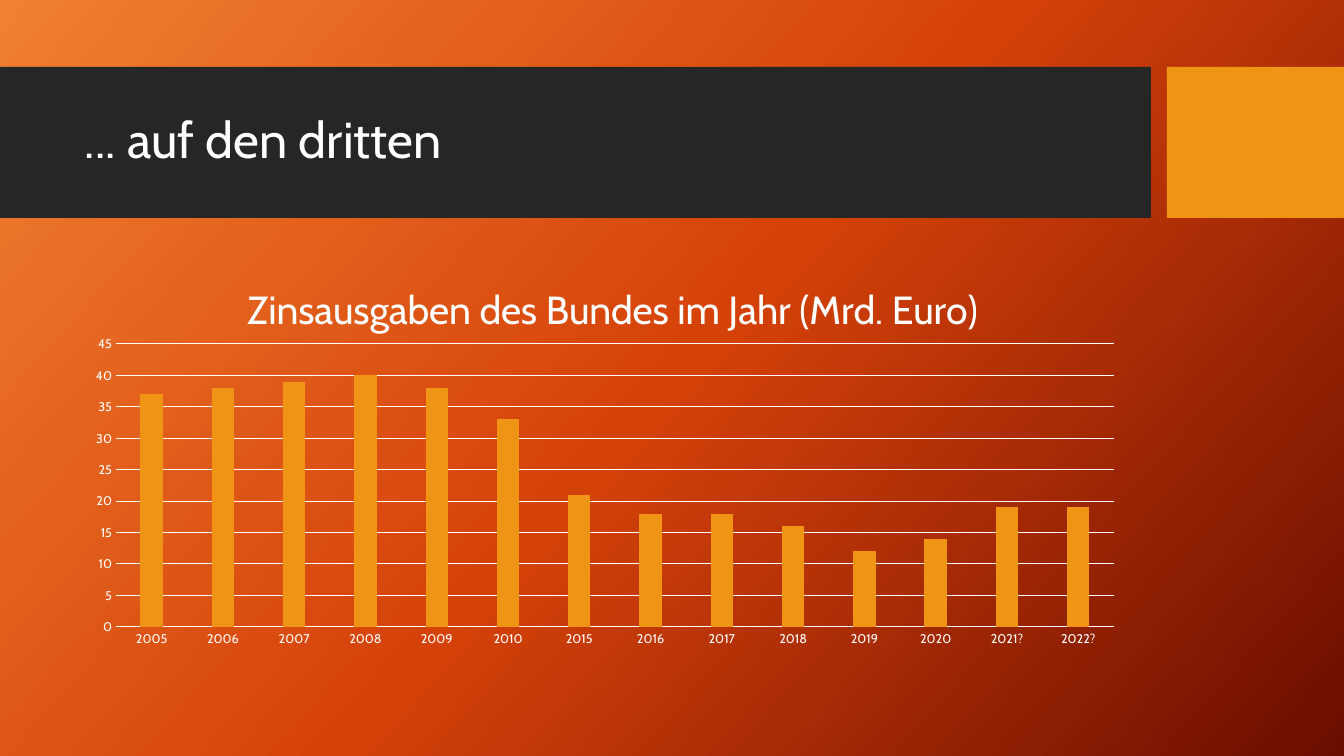
from lxml.etree import SubElement
from pptx import Presentation
from pptx.chart.data import CategoryChartData
from pptx.dml.color import RGBColor
from pptx.enum.chart import XL_CHART_TYPE, XL_TICK_MARK
from pptx.enum.shapes import MSO_SHAPE
from pptx.enum.text import MSO_ANCHOR
from pptx.oxml import parse_xml
from pptx.oxml.ns import nsdecls, qn
from pptx.util import Emu, Pt

# Content
FONT = "Cabin"
COLORS = {"band": "262626", "accent": "F09415", "text": "FFFFFF"}
GRADIENT = [(0, "F18031"), (50, "D54209"), (100, "6A0D00")]
GRADIENT_ANGLE = 42
HEADING = "... auf den dritten"
CHART_TITLE = "Zinsausgaben des Bundes im Jahr (Mrd. Euro)"
INTEREST = {
    "2005": 37, "2006": 38, "2007": 39, "2008": 40, "2009": 38,
    "2010": 33, "2015": 21, "2016": 18, "2017": 18, "2018": 16,
    "2019": 12, "2020": 14, "2021?": 19, "2022?": 19,
}

# Places in px: left, top, width, height
BANDS = [((0, 67, 1151, 151), "band"), ((1167, 67, 177, 151), "accent")]
HEADING_BOX = (75, 83, 1059, 119)
CHART_BOX = (75, 258, 1059, 397)
PLOT_BOX = (116, 344, 998, 283)
TITLE_CORNER = (240, 275)


def px(length):
    return Emu(round(length * 914400 / 100.8))


def place(box):
    return [px(length) for length in box]


def color(name):
    return RGBColor.from_string(COLORS[name])


def style(font, size):
    font.name = FONT
    font.size = Pt(size)
    font.bold = False
    font.color.rgb = color("text")


def white_line(line):
    line.color.rgb = color("text")
    line.width = Pt(0.75)


def set_layout(parent, settings):
    """Fix the place of a chart part as fractions of the chart."""
    layout = parent.get_or_add_layout() if hasattr(parent, "get_or_add_layout") else parent.find(qn("c:layout"))
    if layout is None:
        layout = SubElement(parent, qn("c:layout"))
        parent.insert(0, layout)
    for child in list(layout):
        layout.remove(child)
    manual = SubElement(layout, qn("c:manualLayout"))
    for tag, value in settings:
        SubElement(manual, qn(f"c:{tag}")).set("val", str(value))


def fractions(corner):
    left, top, width, height = CHART_BOX
    return [("xMode", "edge"), ("yMode", "edge"),
            ("x", round((corner[0] - left) / width, 4)),
            ("y", round((corner[1] - top) / height, 4))]


deck = Presentation()
deck.slide_width, deck.slide_height = px(1344), px(756)
slide = deck.slides.add_slide(deck.slide_layouts[6])

# Background gradient
slide.background.fill.gradient()
slide.background.fill.gradient_angle = 360 - GRADIENT_ANGLE
stops = slide.element.xpath(".//a:gsLst")[0]
for stop in list(stops):
    stops.remove(stop)
for position, shade in GRADIENT:
    stops.append(parse_xml(
        f'<a:gs {nsdecls("a")} pos="{position * 1000}"><a:srgbClr val="{shade}"/></a:gs>'))

# Heading bands
for box, name in BANDS:
    band = slide.shapes.add_shape(MSO_SHAPE.RECTANGLE, *place(box))
    band.shadow.inherit = False
    band.fill.solid()
    band.fill.fore_color.rgb = color(name)
    band.line.fill.background()

# Heading
frame = slide.shapes.add_textbox(*place(HEADING_BOX)).text_frame
frame.word_wrap = True
frame.vertical_anchor = MSO_ANCHOR.MIDDLE
para = frame.paragraphs[0]
para.text = HEADING
para.line_spacing = 0.9
style(para.font, 36)

# Column chart
data = CategoryChartData(number_format="0")
data.categories = list(INTEREST)
data.add_series("Series 1", list(INTEREST.values()))
chart = slide.shapes.add_chart(
    XL_CHART_TYPE.COLUMN_CLUSTERED, *place(CHART_BOX), data).chart
style(chart.font, 10)
chart.has_legend = False
chart.has_title = True
title = chart.chart_title
title.include_in_layout = False
title_para = title.text_frame.paragraphs[0]
title_para.text = CHART_TITLE
style(title_para.font, 28)

plot = chart.plots[0]
plot.vary_by_categories = False
plot.gap_width = 219
plot.overlap = -27
columns = plot.series[0].format.fill
columns.solid()
columns.fore_color.rgb = color("accent")

# Axes
for axis in (chart.category_axis, chart.value_axis):
    axis.major_tick_mark = axis.minor_tick_mark = XL_TICK_MARK.NONE
    style(axis.tick_labels.font, 9)
white_line(chart.category_axis.format.line)
values = chart.value_axis
values.minimum_scale, values.maximum_scale, values.major_unit = 0, 45, 5
values.format.line.fill.background()
values.has_major_gridlines = True
white_line(values.major_gridlines.format.line)
values.tick_labels.number_format = "0"
values.tick_labels.number_format_is_linked = False

# Places of plot and chart title
plot_area = chart.element.xpath(".//c:plotArea")[0]
plot_size = [("w", round(PLOT_BOX[2] / CHART_BOX[2], 4)),
             ("h", round(PLOT_BOX[3] / CHART_BOX[3], 4))]
set_layout(plot_area, [("layoutTarget", "inner")] + fractions(PLOT_BOX) + plot_size)
set_layout(chart.element.xpath(".//c:title")[0], fractions(TITLE_CORNER))

deck.save("out.pptx")
